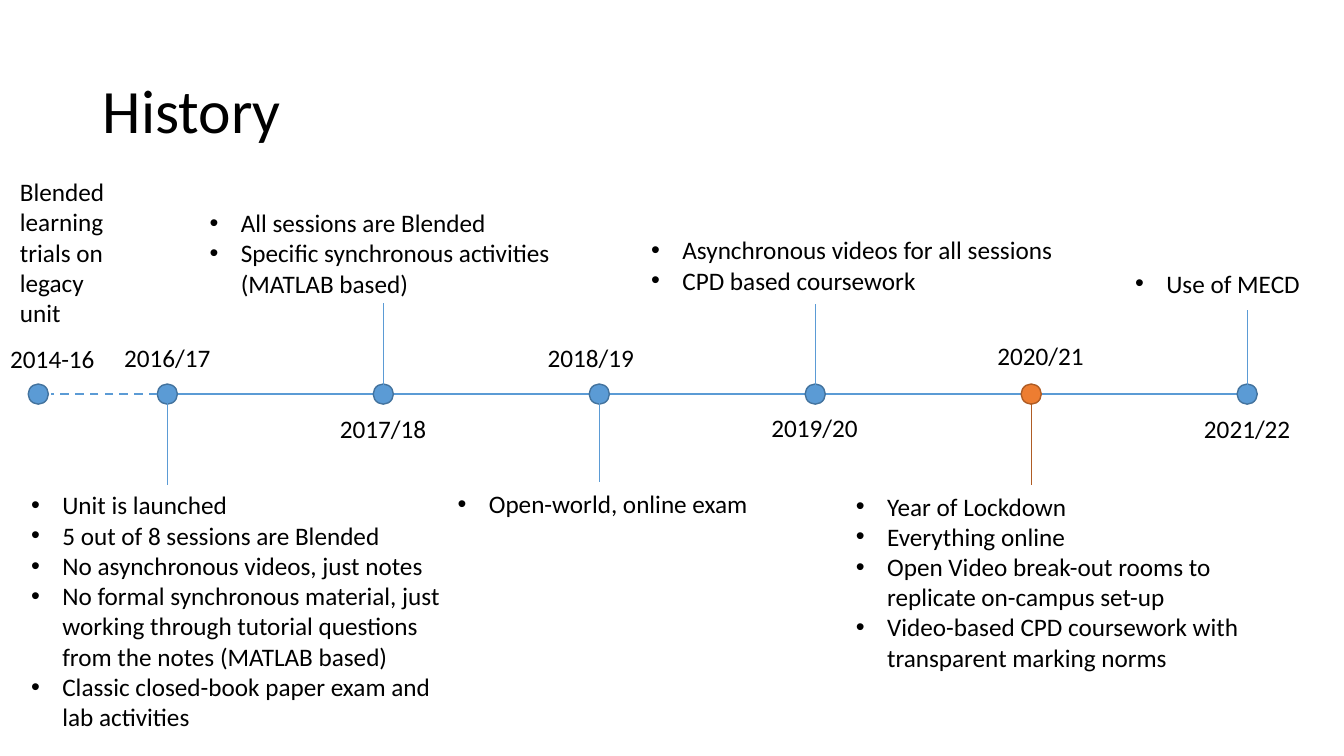
from dataclasses import dataclass

from lxml.etree import SubElement
from pptx import Presentation
from pptx.dml.color import RGBColor
from pptx.enum.dml import MSO_LINE
from pptx.enum.shapes import MSO_CONNECTOR, MSO_SHAPE
from pptx.enum.text import MSO_ANCHOR, PP_ALIGN
from pptx.oxml.ns import qn
from pptx.util import Inches, Pt

COLORS = {
    "text": "000000",
    "blue": "5B9BD5",
    "blue_edge": "43739E",
    "orange": "ED7D31",
    "orange_edge": "AF5C24",
}
FONT = "Calibri"
AXIS_Y = 3.91
FIRST_YEAR_X = 1.66
YEAR_GAP = 2.142
DOT = 0.2
STEM = 0.81
LABEL_SIZE = (1.14, 0.4)


@dataclass
class Year:
    label: str
    label_at: tuple
    stem_top: float
    events_box: tuple
    events: list
    highlight: bool = False


YEARS = [
    Year("2016/17", (1.09, 3.35), 4.0, (0.21, 4.81, 4.45, 2.52), [
        "Unit is launched",
        "5 out of 8 sessions are Blended",
        "No asynchronous videos, just notes",
        "No formal synchronous material, just working through tutorial "
        "questions from the notes (MATLAB based)",
        "Classic closed-book paper exam and lab activities",
    ]),
    Year("2017/18", (3.23, 4.05), 3.01, (1.98, 2.01, 4.45, 1.01), [
        "All sessions are Blended",
        "Specific synchronous activities (MATLAB based)",
    ]),
    Year("2018/19", (5.29, 3.35), 3.97, (4.44, 4.8, 4.45, 0.4), [
        "Open-world, online exam",
    ]),
    Year("2019/20", (7.51, 4.04), 3.02, (6.36, 2.28, 4.45, 0.71), [
        "Asynchronous videos for all sessions",
        "CPD based coursework",
    ]),
    Year("2020/21", (9.75, 3.33), 4.0, (8.39, 4.82, 4.08, 1.92), [
        "Year of Lockdown",
        "Everything online",
        "Open Video break-out rooms to replicate on-campus set-up",
        "Video-based CPD coursework with transparent marking norms",
    ], highlight=True),
    Year("2021/22", (11.8, 4.05), 3.08, (11.16, 2.61, 2.17, 0.4), [
        "Use of MECD",
    ]),
]


def rgb(name):
    return RGBColor.from_string(COLORS[name])


def add_text(slide, box, lines, size=18, align=PP_ALIGN.LEFT, bullets=False):
    frame = slide.shapes.add_textbox(*map(Inches, box)).text_frame
    frame.word_wrap = True
    for index, line in enumerate(lines):
        paragraph = frame.paragraphs[0] if index == 0 else frame.add_paragraph()
        paragraph.text = line
        paragraph.alignment = align
        if bullets:
            add_bullet(paragraph)
        paragraph.font.name = FONT
        paragraph.font.size = Pt(size)
        paragraph.font.color.rgb = rgb("text")
    return frame


def add_bullet(paragraph):
    properties = paragraph._p.get_or_add_pPr()
    properties.set("marL", str(Inches(0.31)))
    properties.set("indent", str(-Inches(0.31)))
    SubElement(properties, qn("a:buFont")).set("typeface", "Arial")
    SubElement(properties, qn("a:buChar")).set("char", "•")


def add_line(slide, start, end, color, width):
    line = slide.shapes.add_connector(
        MSO_CONNECTOR.STRAIGHT, *map(Inches, (*start, *end)))
    line.line.color.rgb = rgb(color)
    line.line.width = Pt(width)
    SubElement(line._element.spPr, qn("a:effectLst"))
    return line


def add_dot(slide, center_x, color):
    dot = slide.shapes.add_shape(
        MSO_SHAPE.OVAL, Inches(center_x - DOT / 2), Inches(AXIS_Y - DOT / 2),
        Inches(DOT), Inches(DOT))
    dot.shadow.inherit = False
    dot.fill.solid()
    dot.fill.fore_color.rgb = rgb(color)
    dot.line.color.rgb = rgb(color + "_edge")
    dot.line.width = Pt(1)


def add_year_label(slide, label, position):
    add_text(slide, (*position, *LABEL_SIZE), [label], align=PP_ALIGN.CENTER)


def add_title(slide, box):
    frame = add_text(slide, box, ["History"], size=44)
    frame.vertical_anchor = MSO_ANCHOR.MIDDLE
    frame.paragraphs[0].line_spacing = 0.9


def add_trials(slide, center_x):
    """Place the dashed lead-in for the years before the unit."""
    lead_in = add_line(slide, (FIRST_YEAR_X - DOT / 2, AXIS_Y),
                       (center_x + 0.13, AXIS_Y), "blue", 1.5)
    lead_in.line.dash_style = MSO_LINE.DASH
    add_dot(slide, center_x, "blue")
    add_year_label(slide, "2014-16", (center_x - 0.43, 3.36))
    add_text(slide, (center_x - 0.28, 1.7, 1.14, 1.62),
             ["Blended learning trials on legacy unit"])


def add_year(slide, center_x, year):
    color = "orange" if year.highlight else "blue"
    add_dot(slide, center_x, color)
    add_line(slide, (center_x, year.stem_top), (center_x, year.stem_top + STEM),
             "orange_edge" if year.highlight else "blue",
             1 if year.highlight else 0.5)
    add_year_label(slide, year.label, year.label_at)
    add_text(slide, year.events_box, year.events, bullets=True)


def add_timeline(slide):
    add_line(slide, (FIRST_YEAR_X, AXIS_Y), (12.42, AXIS_Y), "blue", 1.5)
    for index, year in enumerate(YEARS):
        add_year(slide, FIRST_YEAR_X + index * YEAR_GAP, year)
    add_trials(slide, 0.38)


def main():
    presentation = Presentation()
    presentation.slide_width = Inches(13.33)
    presentation.slide_height = Inches(7.5)
    slide = presentation.slides.add_slide(presentation.slide_layouts[6])
    add_title(slide, (0.92, 0.4, 11.5, 1.45))
    add_timeline(slide)
    presentation.save("out.pptx")


if __name__ == "__main__":
    main()
